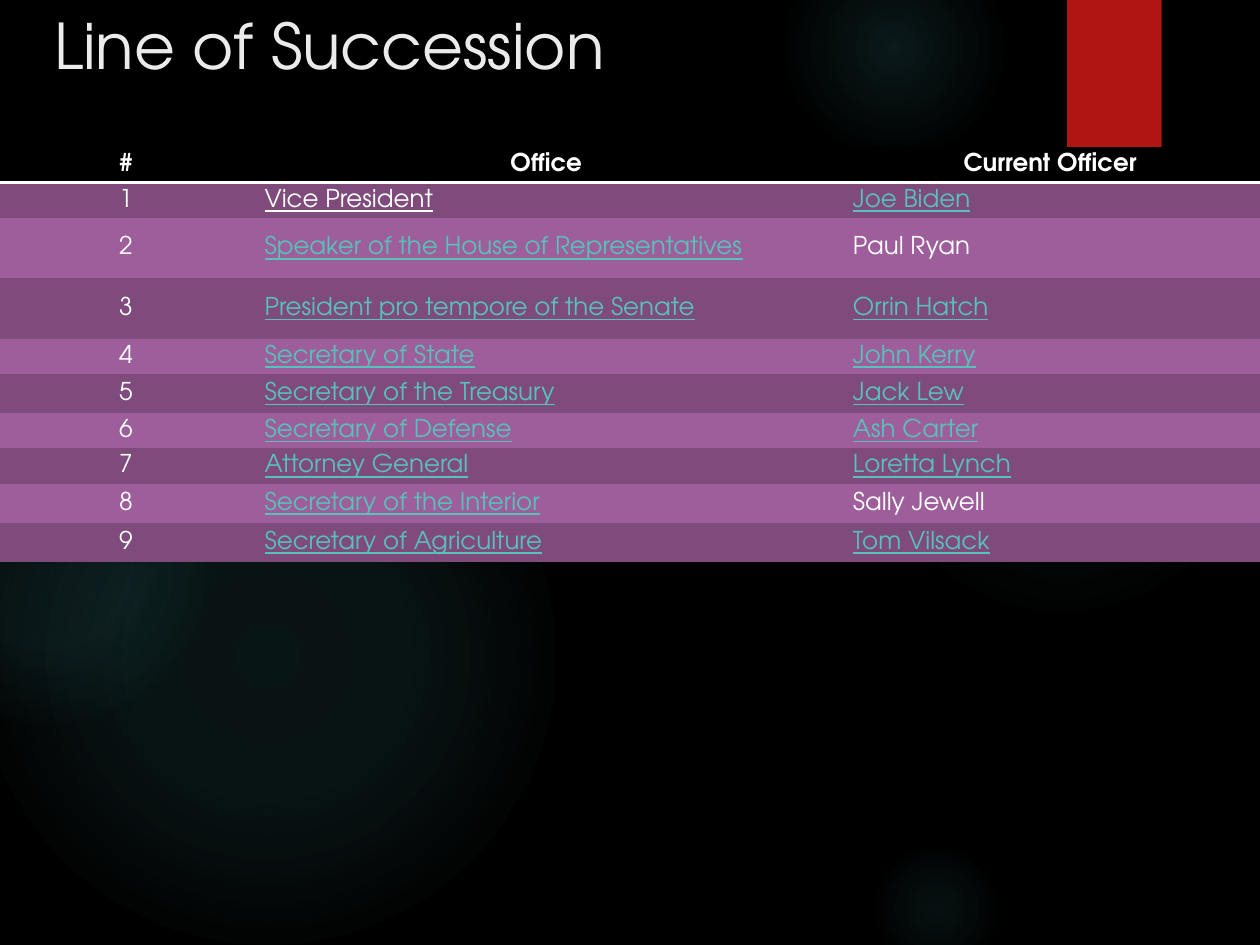
import pptx
import pptx.util
import pptx.oxml
import pptx.oxml.ns
from pptx.dml.color import RGBColor
from pptx.enum.shapes import MSO_SHAPE
from pptx.enum.text import MSO_ANCHOR, PP_ALIGN
from pptx.util import Inches, Pt

FONT = "TeX Gyre Adventor"
BLACK = RGBColor(0x00, 0x00, 0x00)
WHITE = RGBColor(0xFF, 0xFF, 0xFF)
TITLE_GREY = RGBColor(0xEB, 0xEB, 0xEB)
RED = RGBColor(0xB0, 0x15, 0x13)
GLOW = RGBColor(0x50, 0xB9, 0xC1)
LINK = RGBColor(0x58, 0xC1, 0xBA)
BANDS = (RGBColor(0x7F, 0x4B, 0x7C), RGBColor(0x9E, 0x5E, 0x9B))
PLAIN_STYLE = "{2D5ABB26-0587-4C30-8999-92F81FD0307C}"

# Content
TITLE = "Line of Succession"
HEADERS = ("#", "Office", "Current Officer")
SUCCESSION = [
    ("Vice President", "Joe Biden"),
    ("Speaker of the House of Representatives", "Paul Ryan"),
    ("President pro tempore of the Senate", "Orrin Hatch"),
    ("Secretary of State", "John Kerry"),
    ("Secretary of the Treasury", "Jack Lew"),
    ("Secretary of Defense", "Ash Carter"),
    ("Attorney General", "Loretta Lynch"),
    ("Secretary of the Interior", "Sally Jewell"),
    ("Secretary of Agriculture", "Tom Vilsack"),
]
WHITE_UNDERLINED = {"Vice President"}
NOT_LINKED = {"Paul Ryan", "Sally Jewell"}
COLUMN_WIDTHS = (2, 4.67, 3.33)
ROW_HEIGHTS = (0.28, 0.28, 0.48, 0.48, 0.28, 0.31, 0.28, 0.28, 0.31, 0.31)

# Glows: left, top, diameter, ((stop %, opacity %), ...)
GLOWS = [
    (6.89, 1.83, 3.08, ((0, 7), (36, 6), (69, 0))),
    (6.22, -0.5, 1.75, ((0, 14), (36, 7), (73, 0))),
    (6.89, 6.67, 1.08, ((0, 9), (36, 5), (66, 0))),
    (-0.17, 2.92, 4.58, ((0, 11), (36, 10), (75, 0))),
    (-0.92, 3.17, 2.58, ((0, 8), (36, 8), (72, 0))),
]


def add_plain_shape(slide, kind, left, top, width, height):
    shape = slide.shapes.add_shape(
        kind, Inches(left), Inches(top), Inches(width), Inches(height))
    shape.shadow.inherit = False
    shape.line.fill.background()
    return shape


def add_glow(slide, left, top, diameter, stops):
    glow = add_plain_shape(slide, MSO_SHAPE.OVAL, left, top, diameter, diameter)
    glow.fill.background()
    stop_xml = "".join(
        f'<a:gs pos="{position * 1000}"><a:srgbClr val="{GLOW}">'
        f'<a:alpha val="{opacity * 1000}"/></a:srgbClr></a:gs>'
        for position, opacity in stops)
    gradient = pptx.oxml.parse_xml(
        f'<a:gradFill {pptx.oxml.ns.nsdecls("a")} rotWithShape="1">'
        f'<a:gsLst>{stop_xml}</a:gsLst><a:path path="circle">'
        '<a:fillToRect l="50000" t="50000" r="50000" b="50000"/>'
        '</a:path></a:gradFill>')
    properties = glow.element.spPr
    properties.replace(properties.find(pptx.oxml.ns.qn("a:noFill")), gradient)


def format_run(run, size, color, bold=False, underline=False):
    run.font.name = FONT
    run.font.size = Pt(size)
    run.font.color.rgb = color
    run.font.bold = bold
    run.font.underline = underline


def fill_cell(cell, text, fill, color, centred, bold, underline):
    cell.margin_top = cell.margin_bottom = 0
    cell.vertical_anchor = MSO_ANCHOR.MIDDLE
    cell.fill.solid()
    cell.fill.fore_color.rgb = fill
    para = cell.text_frame.paragraphs[0]
    para.text = text
    para.alignment = PP_ALIGN.CENTER if centred else PP_ALIGN.LEFT
    format_run(para.runs[0], 14, color, bold, underline)


def add_bottom_border(cell):
    border = pptx.oxml.parse_xml(
        f'<a:lnB {pptx.oxml.ns.nsdecls("a")} w="{Pt(2)}"><a:solidFill>'
        f'<a:srgbClr val="{WHITE}"/></a:solidFill></a:lnB>')
    cell.fill  # the cell properties exist once a fill is set
    cell._tc.get_or_add_tcPr().insert(0, border)


def add_succession_table(slide):
    frame = slide.shapes.add_table(
        len(ROW_HEIGHTS), len(COLUMN_WIDTHS), Inches(0), Inches(1.17),
        Inches(sum(COLUMN_WIDTHS)), Inches(sum(ROW_HEIGHTS)))
    table = frame.table
    table.horz_banding = False
    style = next(frame.element.iter(pptx.oxml.ns.qn("a:tableStyleId")))
    style.text = PLAIN_STYLE
    for column, width in zip(table.columns, COLUMN_WIDTHS):
        column.width = Inches(width)
    for row, height in zip(table.rows, ROW_HEIGHTS):
        row.height = Inches(height)

    # Header row
    for column, text in enumerate(HEADERS):
        cell = table.cell(0, column)
        fill_cell(cell, text, BLACK, WHITE, True, True, False)
        add_bottom_border(cell)

    # Numbered offices
    for number, names in enumerate(SUCCESSION, start=1):
        band = BANDS[(number - 1) % 2]
        fill_cell(table.cell(number, 0), str(number), band, WHITE,
                  True, False, False)
        for column, name in enumerate(names, start=1):
            underline = name not in NOT_LINKED
            linked = underline and name not in WHITE_UNDERLINED
            fill_cell(table.cell(number, column), name, band,
                      LINK if linked else WHITE, False, False, underline)


def main():
    deck = pptx.Presentation()
    deck.slide_width, deck.slide_height = Inches(10), Inches(7.5)
    slide = deck.slides.add_slide(deck.slide_layouts[5])
    slide.background.fill.solid()
    slide.background.fill.fore_color.rgb = BLACK

    # Backdrop
    for glow in GLOWS:
        add_glow(slide, *glow)
    tab = add_plain_shape(slide, MSO_SHAPE.RECTANGLE, 8.47, 0, 0.75, 1.2)
    tab.fill.solid()
    tab.fill.fore_color.rgb = RED

    # Title, in front of the backdrop
    title = slide.shapes.title
    title.element.getparent().append(title.element)
    title.left, title.top = Inches(0.33), Inches(0)
    title.width, title.height = Inches(7.72), Inches(1.53)
    title.text_frame.text = TITLE
    title.text_frame.word_wrap = True
    title.text_frame.vertical_anchor = MSO_ANCHOR.TOP
    para = title.text_frame.paragraphs[0]
    para.alignment = PP_ALIGN.LEFT
    format_run(para.runs[0], 36, TITLE_GREY)

    add_succession_table(slide)
    deck.save("out.pptx")


if __name__ == "__main__":
    main()
